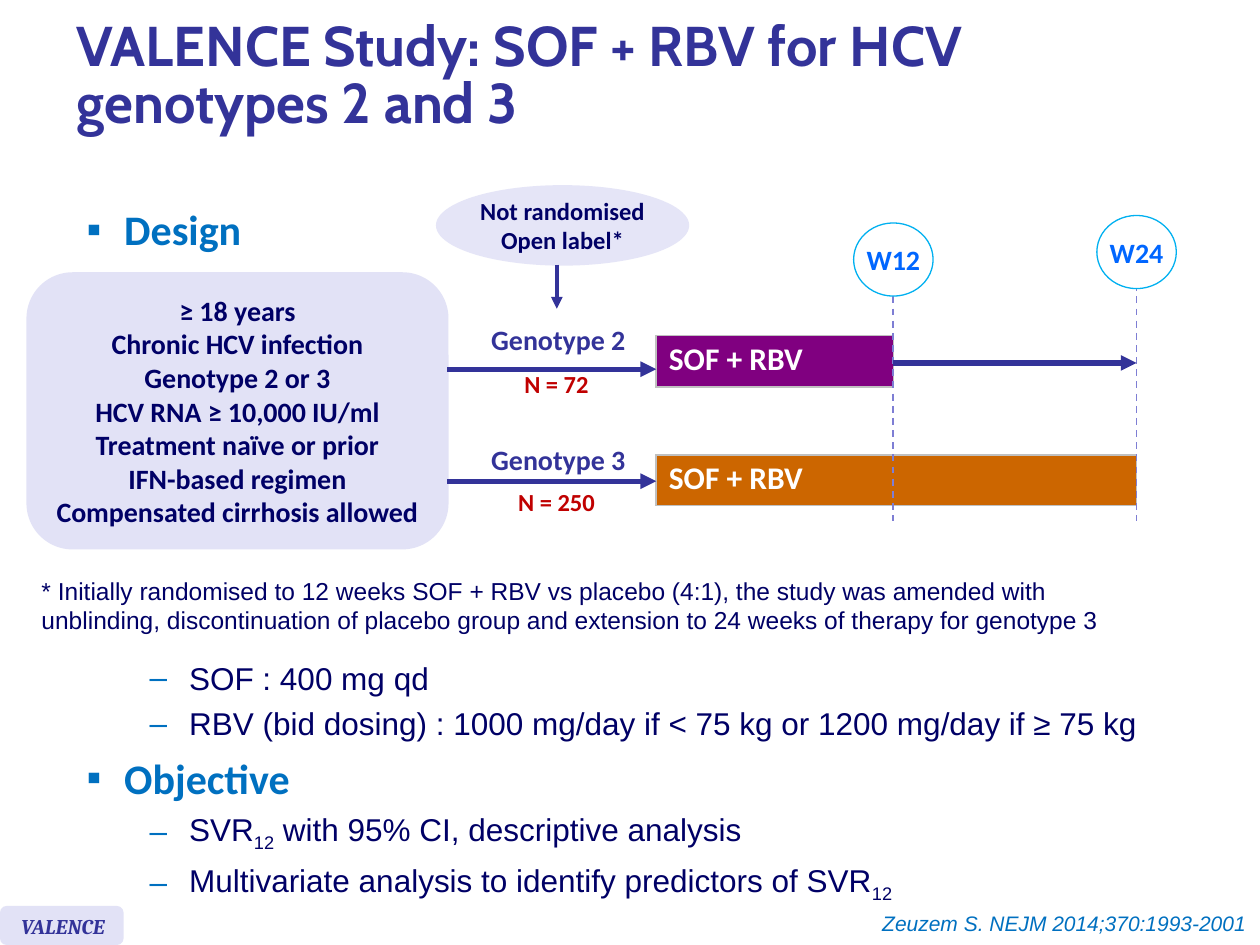
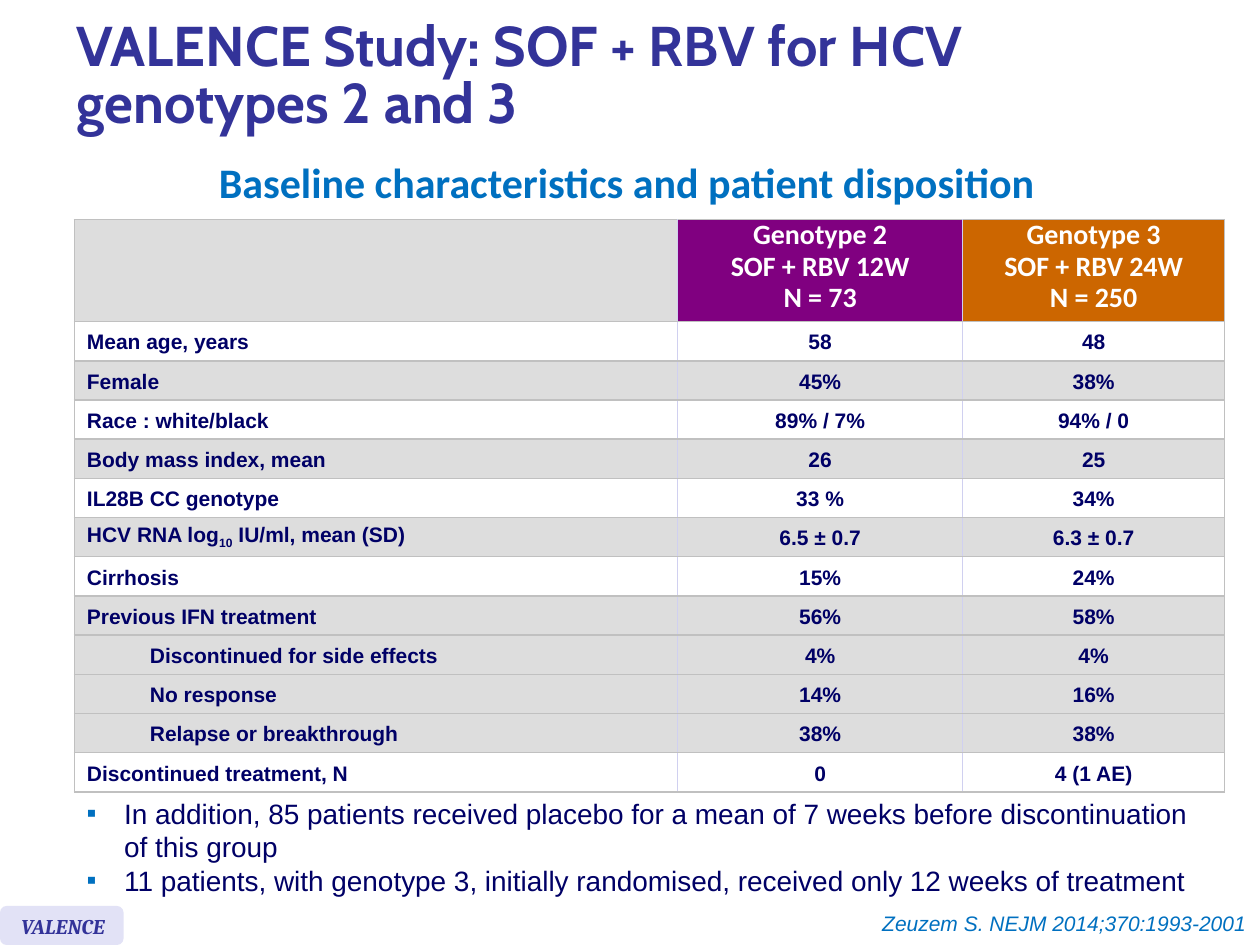
import pptx
import pptx.util
import pptx.dml.color
import pptx.enum.shapes
import pptx.enum.text
import pptx.enum.dml
import pptx.oxml.ns
from lxml import etree

Pt = pptx.util.Pt
SHAPE = pptx.enum.shapes.MSO_SHAPE
ALIGN = {"left": pptx.enum.text.PP_ALIGN.LEFT, "center": pptx.enum.text.PP_ALIGN.CENTER,
         "right": pptx.enum.text.PP_ALIGN.RIGHT}
MIDDLE = pptx.enum.text.MSO_ANCHOR.MIDDLE
TOP = pptx.enum.text.MSO_ANCHOR.TOP

COLORS = {
    "title": "333399", "text": "000066", "accent": "0070C0", "white": "FFFFFF",
    "panel": "E2E2F6", "note": "E5E5F7", "genotype 2": "800080", "genotype 3": "CC6600",
    "count": "C00000", "week": "0066FF", "ring": "00B0F0", "dash": "7E7ED4",
    "stripe": "DDDDDD", "border": "C0C0C0", "inner": "D0D0F0",
}

# Content; text between underscores is subscript
TITLE = "VALENCE Study: SOF + RBV for HCV genotypes 2 and 3"
STUDY = "VALENCE"
CITATION = "Zeuzem S. NEJM 2014;370:1993-2001"

ELIGIBILITY = ["≥ 18 years", "Chronic HCV infection", "Genotype 2 or 3",
               "HCV RNA ≥ 10,000 IU/ml", "Treatment naïve or prior",
               "IFN-based regimen", "Compensated cirrhosis allowed"]
ALLOCATION = ["Not randomised", "Open label*"]
FOOTNOTE = [
    "* Initially randomised to 12 weeks SOF + RBV vs placebo (4:1), the study was amended with",
    "unblinding, discontinuation of placebo group and extension to 24 weeks of therapy"
    " for genotype 3",
]
REGIMEN = "SOF + RBV"
# name, size, color, bar top, bar height, bar end, arrow y, label top, count top
ARMS = [
    ("Genotype 2", "N = 72", "genotype 2", 191.8, 29.5, 510.5, 211, 180.7, 207.4),
    ("Genotype 3", "N = 250", "genotype 3", 260, 29, 649.5, 275, 249.1, 275),
]
WEEKS = [("W12", 510.5, 127.4), ("W24", 649.5, 123.1)]  # label, x, circle top
DETAILS = [
    ("item", "SOF : 400 mg qd"),
    ("item", "RBV (bid dosing) : 1000 mg/day if < 75 kg or 1200 mg/day if ≥ 75 kg"),
    ("head", "Objective"),
    ("item", "SVR_12_ with 95% CI, descriptive analysis"),
    ("item", "Multivariate analysis to identify predictors of SVR_12_"),
]

SUBTITLE = "Baseline characteristics and patient disposition"
TABLE_HEADS = [
    ("genotype 2", ["Genotype 2", "SOF + RBV 12W", "N = 73"]),
    ("genotype 3", ["Genotype 3", "SOF + RBV 24W", "N = 250"]),
]
# label, genotype 2, genotype 3, is a sub-row
BASELINE = [
    ("Mean age, years", "58", "48", False),
    ("Female", "45%", "38%", False),
    ("Race : white/black", "89% / 7%", "94% / 0", False),
    ("Body mass index, mean", "26", "25", False),
    ("IL28B CC genotype", "33 %", "34%", False),
    ("HCV RNA log_10_ IU/ml, mean (SD)", "6.5 ± 0.7", "6.3 ± 0.7", False),
    ("Cirrhosis", "15%", "24%", False),
    ("Previous IFN treatment", "56%", "58%", False),
    ("Discontinued for side effects", "4%", "4%", True),
    ("No response", "14%", "16%", True),
    ("Relapse or breakthrough", "38%", "38%", True),
    ("Discontinued treatment, N", "0", "4 (1 AE)", False),
]
REMARKS = [
    "In addition, 85 patients received placebo for a mean of 7 weeks before discontinuation"
    " of this group",
    "11 patients, with genotype 3, initially randomised, received only 12 weeks of treatment",
]

# Paragraph styles
HEAD = dict(size=24, font="Calibri", color="accent", bold=True, before=5.8,
            bullet="▪", margin=21.4, hang=21.4)
ITEM = dict(size=18, before=4.3, bullet="–", margin=58.5, hang=22.5)
REMARK = dict(size=16, bullet="▪", margin=21.4, hang=21.4)
LABEL = dict(font="Calibri", bold=True)
CELL = dict(bold=True, line=Pt(15), before=3)


def rgb(name):
    return pptx.dml.color.RGBColor.from_string(COLORS[name])


def add_xml(parent, tag, **attributes):
    return etree.SubElement(parent, pptx.oxml.ns.qn(tag), attributes)


def add_color(parent, tag, name):
    add_xml(add_xml(parent, tag), "a:srgbClr", val=COLORS[name])


def add_para(frame, text, first=False, size=12, font="Arial", color="text", bold=False,
             italic=False, align="left", line=None, before=0, bullet=None, margin=0, hang=0):
    para = frame.paragraphs[0] if first else frame.add_paragraph()
    para.alignment = ALIGN[align]
    if line:
        para.line_spacing = line
    if before and not first:
        para.space_before = Pt(before)
    properties = para._p.get_or_add_pPr()
    if margin:
        properties.set("marL", str(int(Pt(margin))))
        properties.set("indent", str(-int(Pt(hang))))
    if bullet:
        add_color(properties, "a:buClr", "accent")
        add_xml(properties, "a:buFont", typeface="Arial")
        add_xml(properties, "a:buChar", char=bullet)
    for index, part in enumerate(text.split("_")):
        if part:
            span = para.add_run()
            span.text = part
            span.font.size, span.font.name = Pt(size), font
            span.font.bold, span.font.italic = bold, italic
            span.font.color.rgb = rgb(color)
            if index % 2:
                span.font._element.set("baseline", "-25000")


def write(frame, texts, **style):
    """Fill a text frame with one string or a list of them, all in one style."""
    for index, text in enumerate([texts] if isinstance(texts, str) else texts):
        add_para(frame, text, first=index == 0, **style)


def add_text(page, place, texts, wrap=True, anchor=TOP, **style):
    box = page.shapes.add_textbox(*map(Pt, place))
    box.text_frame.word_wrap = wrap
    box.text_frame.vertical_anchor = anchor
    write(box.text_frame, texts, **style)
    return box


def add_panel(page, kind, place, fill, texts=(), line=None, wrap=True, **style):
    panel = page.shapes.add_shape(kind, *map(Pt, place))
    panel.shadow.inherit = False
    panel.fill.solid()
    panel.fill.fore_color.rgb = rgb(fill)
    if line:
        panel.line.color.rgb = rgb(line)
        panel.line.width = Pt(0.75)
    else:
        panel.line.fill.background()
    panel.text_frame.word_wrap = wrap
    panel.text_frame.vertical_anchor = MIDDLE
    write(panel.text_frame, texts, align="center", **style)


def add_line(page, start, end, color="title", width=3.0, arrow=True):
    line = page.shapes.add_connector(pptx.enum.shapes.MSO_CONNECTOR.STRAIGHT,
                                     *map(Pt, start + end))
    line.line.color.rgb = rgb(color)
    line.line.width = Pt(width)
    if arrow:
        add_xml(line.line._get_or_add_ln(), "a:tailEnd", type="triangle")
    else:
        line.line.dash_style = pptx.enum.dml.MSO_LINE.DASH
    add_xml(line._element.spPr, "a:effectLst")


def add_grid(page, left, top, widths, heights):
    frame = page.shapes.add_table(len(heights), len(widths), Pt(left), Pt(top),
                                  Pt(sum(widths)), Pt(sum(heights)))
    table = frame.table
    table.first_row = table.horz_banding = False
    for column, width in zip(table.columns, widths):
        column.width = Pt(width)
    for row, height in zip(table.rows, heights):
        row.height = Pt(height)
    return table


def fill_cell(cell, fill, texts=(), left="border", right="border", **style):
    cell.vertical_anchor = MIDDLE
    properties = cell._tc.get_or_add_tcPr()
    for side, color in zip("LRTB", (left, right, "border", "border")):
        add_color(add_xml(properties, "a:ln" + side, w=str(int(Pt(1)))), "a:solidFill", color)
    cell.fill.solid()
    cell.fill.fore_color.rgb = rgb(fill)
    write(cell.text_frame, texts, **style)


def add_page(deck):
    """Blank page with the shared title, study badge and citation."""
    page = deck.slides.add_slide(deck.slide_layouts[6])
    add_text(page, (36.7, 5.8, 657.4, 77), TITLE, anchor=MIDDLE, size=32, font="Cabin",
             color="title", bold=True, line=0.85)
    add_panel(page, SHAPE.ROUNDED_RECTANGLE, (0, 517.7, 70.6, 22.3), "panel")
    add_text(page, (5, 518.4, 76.3, 21.6), STUDY, font="Cambria", color="title",
             bold=True, italic=True)
    add_text(page, (394.6, 517, 324.7, 21.6), CITATION, color="accent", italic=True,
             align="right")
    return page


def build_design(deck):
    page = add_page(deck)
    bar_left, panel_right = 375, 255.6

    # Treatment bars
    for name, count, color, top, height, end, *_ in ARMS:
        table = add_grid(page, bar_left, top, [end - bar_left], [height])
        fill_cell(table.cell(0, 0), color, REGIMEN, size=18, color="white", line=0.8, **LABEL)

    # Population and allocation
    add_panel(page, SHAPE.OVAL, (249.1, 105.8, 144.7, 46), "note", ALLOCATION, wrap=False,
              size=14, **LABEL)
    add_panel(page, SHAPE.ROUNDED_RECTANGLE, (15.1, 155.6, 241.2, 158.4), "panel",
              ELIGIBILITY, size=16, **LABEL)
    add_line(page, (318.2, 151.2), (318.2, 176.4), width=2.25)

    # Week markers
    for week, x, top in WEEKS:
        add_line(page, (x, 155.5), (x, 298), color="dash", width=1, arrow=False)
        add_panel(page, SHAPE.OVAL, (x - 22.7, top, 45.4, 41.8), "white", week, line="ring",
                  wrap=False, size=16, color="week", **LABEL)
    add_line(page, (WEEKS[0][1], 207.4), (WEEKS[1][1], 207.4))

    # Arm labels and arrows
    for name, count, _, _, _, _, arrow_y, label_top, count_top in ARMS:
        add_line(page, (panel_right, arrow_y), (bar_left, arrow_y))
        add_text(page, (273.6, label_top, 92.2, 26.6), name, wrap=False, size=16,
                 color="title", **LABEL)
        add_text(page, (288.5, count_top, 59, 24.5), count, wrap=False, size=14,
                 color="count", align="center", **LABEL)

    # Text
    add_text(page, (42.5, 113, 657.4, 26.6), "Design", **HEAD)
    add_text(page, (16.6, 325.4, 620.6, 41), FOOTNOTE, wrap=False, size=14)
    box = add_text(page, (42.5, 373, 657.4, 141), ())
    for index, (level, text) in enumerate(DETAILS):
        add_para(box.text_frame, text, first=index == 0, **(HEAD if level == "head" else ITEM))


def build_baseline(deck):
    page = add_page(deck)
    add_text(page, (76.3, 99.4, 563.8, 25.2), SUBTITLE, size=24, color="accent",
             align="center", line=Pt(15.2), **LABEL)
    add_text(page, (42.5, 451.4, 657.4, 73.4), REMARKS, **REMARK)

    # Baseline table; sub-rows keep the stripe of the row they belong to
    table = add_grid(page, 42.5, 125.5, [344.8, 162.8, 149.8], [58.3] + [22.4] * len(BASELINE))
    edges = [("border", "inner"), ("inner", "inner"), ("inner", "border")]
    fill_cell(table.cell(0, 0), "stripe", right="inner")
    for column, (color, lines) in enumerate(TABLE_HEADS, 1):
        left, right = edges[column]
        fill_cell(table.cell(0, column), color, lines, left, right, size=16, font="Calibri",
                  color="white", align="center", **CELL)
    striped = True
    for row, (*values, is_sub) in enumerate(BASELINE, 1):
        striped = striped if is_sub else not striped
        for column, value in enumerate(values):
            left, right = edges[column]
            fill_cell(table.cell(row, column), "stripe" if striped else "white", value,
                      left, right, align="center" if column else "left",
                      margin=36 if is_sub and not column else 0, **CELL)


def main():
    deck = pptx.Presentation()
    deck.slide_width, deck.slide_height = Pt(720), Pt(540)
    build_design(deck)
    build_baseline(deck)
    deck.save("out.pptx")


if __name__ == "__main__":
    main()
